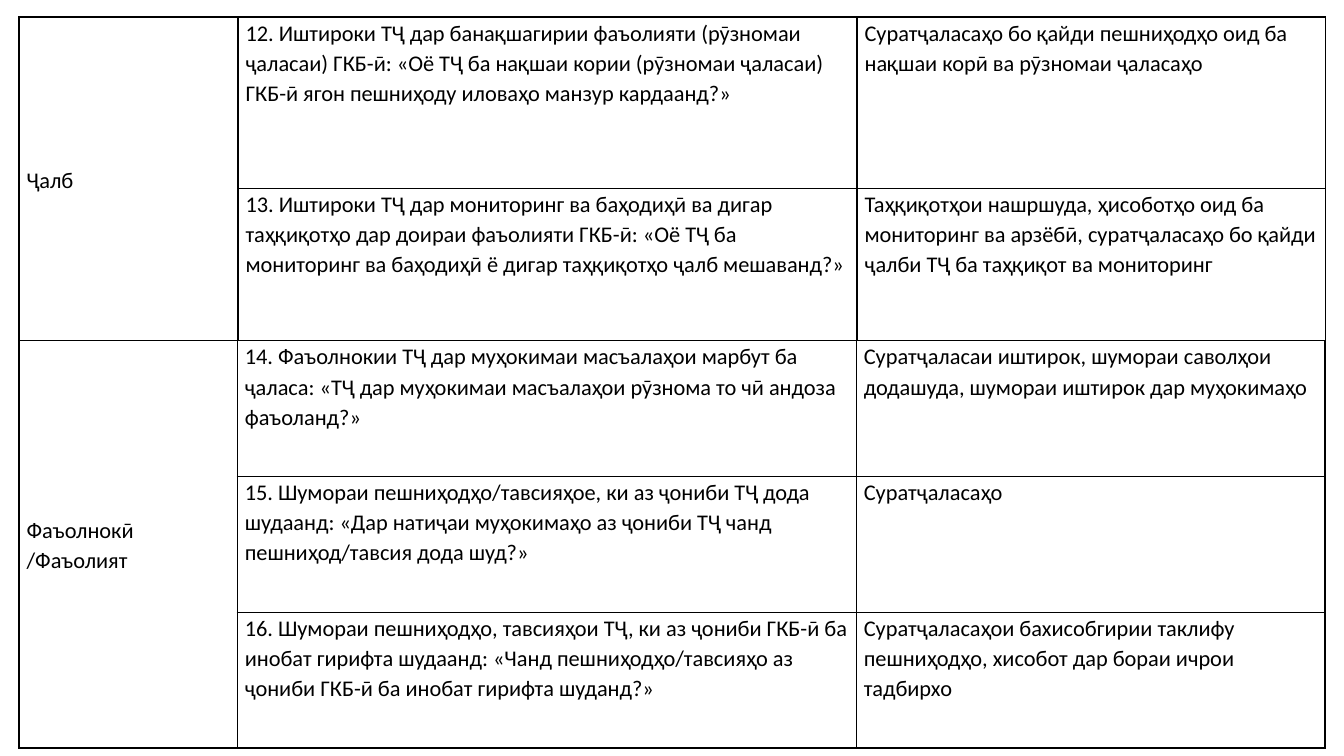
from lxml.etree import SubElement
from pptx import Presentation
from pptx.dml.color import RGBColor
from pptx.enum.text import MSO_ANCHOR as Anchor
from pptx.oxml.ns import qn
from pptx.util import Cm, Pt

LEFT = 0.48
QUESTION_WIDTH = 15.6
SOURCE_WIDTH = 11.81

INVOLVEMENT = [
    ("12. Иштироки ТҶ дар банақшагирии фаъолияти (рӯзномаи ҷаласаи) ГКБ-ӣ: "
     "«Оё ТҶ ба нақшаи кории (рӯзномаи ҷаласаи) ГКБ-ӣ ягон пешниҳоду иловаҳо манзур кардаанд?»",
     "Суратҷаласаҳо бо қайди пешниҳодҳо оид ба нақшаи корӣ ва рӯзномаи ҷаласаҳо"),
    ("13. Иштироки ТҶ дар мониторинг ва баҳодиҳӣ ва дигар таҳқиқотҳо дар доираи фаъолияти ГКБ-ӣ: "
     "«Оё ТҶ ба мониторинг ва баҳодиҳӣ ё дигар таҳқиқотҳо ҷалб мешаванд?»",
     "Таҳқиқотҳои нашршуда, ҳисоботҳо оид ба мониторинг ва арзёбӣ, "
     "суратҷаласаҳо бо қайди ҷалби ТҶ ба таҳқиқот ва мониторинг"),
]
ACTIVITY = [
    ("14. Фаъолнокии ТҶ дар муҳокимаи масъалаҳои марбут ба ҷаласа: "
     "«ТҶ дар муҳокимаи масъалаҳои рӯзнома то чӣ андоза фаъоланд?»",
     "Суратҷаласаи иштирок, шумораи саволҳои додашуда, шумораи иштирок дар муҳокимаҳо"),
    ("15. Шумораи пешниҳодҳо/тавсияҳое, ки аз ҷониби ТҶ дода шудаанд: "
     "«Дар натиҷаи муҳокимаҳо аз ҷониби ТҶ чанд пешниҳод/тавсия дода шуд?»",
     "Суратҷаласаҳо"),
    ("16. Шумораи пешниҳодҳо, тавсияҳои ТҶ, ки аз ҷониби ГКБ-ӣ ба инобат гирифта шудаанд: "
     "«Чанд пешниҳодҳо/тавсияҳо аз ҷониби ГКБ-ӣ ба инобат гирифта шуданд?»",
     "Суратҷаласаҳои бахисобгирии таклифу пешниҳодҳо, хисобот дар бораи ичрои тадбирхо"),
]


def color(value):
    return RGBColor.from_string(value)


def write_text(cell, text, size=16, font="Calibri", text_color="000000", anchor=Anchor.TOP):
    cell.vertical_anchor = anchor
    paragraph = cell.text_frame.paragraphs[0]
    paragraph.line_spacing = 1.1
    run = paragraph.add_run()
    run.text = text
    run.font.size = Pt(size)
    run.font.name = font
    run.font.color.rgb = color(text_color)


def add_borders(cell, line_color="000000", width=1):
    properties = cell._tc.get_or_add_tcPr()
    for position, side in enumerate(("lnL", "lnR", "lnT", "lnB")):
        line = SubElement(properties, qn(f"a:{side}"), w=str(Pt(width)))
        fill = SubElement(line, qn("a:solidFill"))
        SubElement(fill, qn("a:srgbClr"), val=line_color)
        properties.insert(position, line)


def format_cell(cell):
    cell.margin_left = cell.margin_right = Cm(0.19)
    cell.margin_top = cell.margin_bottom = 0
    cell.fill.background()
    add_borders(cell)


def add_criteria_table(slide, category, criteria, top, category_width, row_heights):
    widths = [category_width, QUESTION_WIDTH, SOURCE_WIDTH]
    table = slide.shapes.add_table(
        len(criteria), len(widths), Cm(LEFT), Cm(top), Cm(sum(widths)), Cm(sum(row_heights))
    ).table
    table.first_row = table.horz_banding = False
    for column, width in zip(table.columns, widths):
        column.width = Cm(width)
    for row, height in zip(table.rows, row_heights):
        row.height = Cm(height)
    for cell in table.iter_cells():
        format_cell(cell)
    table.cell(0, 0).merge(table.cell(len(criteria) - 1, 0))
    write_text(table.cell(0, 0), category, anchor=Anchor.MIDDLE)
    for row, texts in enumerate(criteria):
        for column, text in enumerate(texts, start=1):
            write_text(table.cell(row, column), text)


def main():
    presentation = Presentation()
    presentation.slide_width = Cm(33.87)
    presentation.slide_height = Cm(19.05)
    slide = presentation.slides.add_slide(presentation.slide_layouts[6])
    add_criteria_table(slide, "Ҷалб", INVOLVEMENT,
                       top=0.43, category_width=5.52, row_heights=[4.32, 3.84])
    add_criteria_table(slide, "Фаъолнокӣ /Фаъолият", ACTIVITY,
                       top=8.59, category_width=5.5, row_heights=[3.42] * 3)
    presentation.save("out.pptx")


if __name__ == "__main__":
    main()
